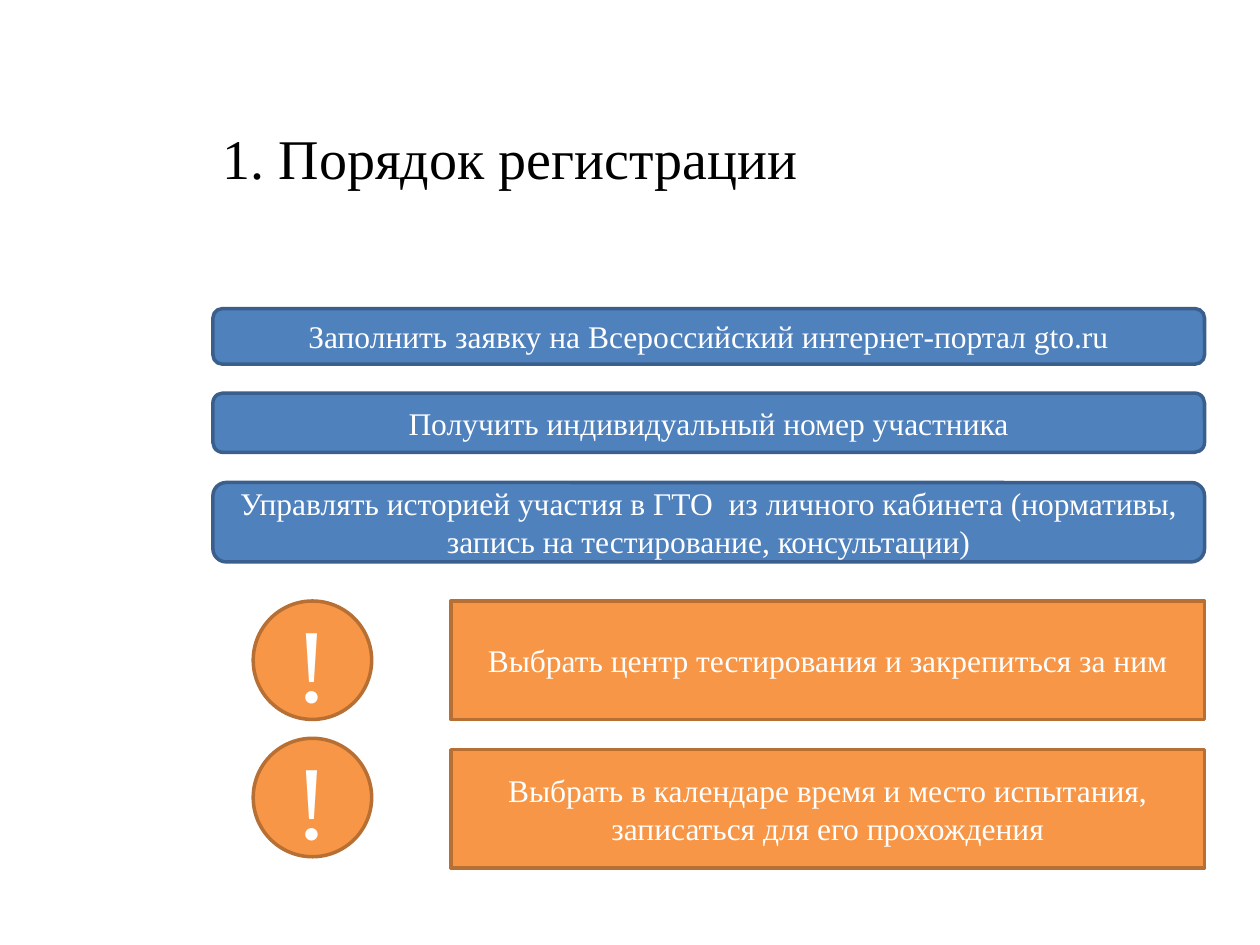
from pptx import Presentation
from pptx.dml.color import RGBColor
from pptx.enum import shapes, text
from pptx.util import Inches, Pt

FONT = "Times New Roman"
BLACK = RGBColor(0x00, 0x00, 0x00)
WHITE = RGBColor(0xFF, 0xFF, 0xFF)
BLUE = RGBColor(0x4F, 0x81, 0xBD)
NAVY = RGBColor(0x3A, 0x5F, 0x8C)
ORANGE = RGBColor(0xF7, 0x96, 0x46)
BROWN = RGBColor(0xB7, 0x6F, 0x34)
KIND = shapes.MSO_SHAPE

# Top and height of each step, then its wording
STEPS = [
    (0, 0.44, "Заполнить заявку на Всероссийский интернет-портал gto.ru"),
    (0.67, 0.47, "Получить индивидуальный номер участника"),
    (1.38, 0.63, "Управлять историей участия в ГТО  из личного кабинета "
                 "(нормативы, запись на тестирование, консультации)"),
]
# Top of the mark and of the box, then the wording
ALERTS = [
    (0, 0, "Выбрать центр тестирования и закрепиться за ним"),
    (1.09, 1.18, "Выбрать в календаре время и место испытания, "
                 "записаться для его прохождения"),
]


def write(shape, words, size=18, color=WHITE):
    frame = shape.text_frame
    frame.word_wrap = True
    frame.vertical_anchor = text.MSO_ANCHOR.MIDDLE
    para = frame.paragraphs[0]
    para.alignment = text.PP_ALIGN.CENTER
    run = para.add_run()
    run.text = words
    run.font.name = FONT
    run.font.size = Pt(size)
    run.font.color.rgb = color


def block(slide, kind, box, words, fill, edge, size=18):
    """Add a filled, outlined shape with centred text."""
    shape = slide.shapes.add_shape(kind, *map(Inches, box))
    shape.shadow.inherit = False
    shape.fill.solid()
    shape.fill.fore_color.rgb = fill
    shape.line.color.rgb = edge
    shape.line.width = Pt(2)
    write(shape, words, size=size)


def head(slide, left, top, width, height):
    title = slide.shapes.title
    title.left, title.top = Inches(left), Inches(top)
    title.width, title.height = Inches(width), Inches(height)
    write(title, "1. Порядок регистрации", size=32, color=BLACK)


def steps(slide, left, top, width):
    for drop, height, words in STEPS:
        block(slide, KIND.ROUNDED_RECTANGLE,
              (left, top + drop, width, height), words, BLUE, NAVY)


def alerts(slide, left, top, width):
    """Pair each orange box with a round exclamation mark at its left."""
    side, inset = 0.94, 1.57
    for mark, drop, words in ALERTS:
        block(slide, KIND.RECTANGLE,
              (left + inset, top + drop, width - inset, side),
              words, ORANGE, BROWN)
        block(slide, KIND.OVAL, (left, top + mark, side, side),
              "!", ORANGE, BROWN, size=60)


def main():
    deck = Presentation()
    deck.slide_width, deck.slide_height = Inches(10), Inches(7.5)
    slide = deck.slides.add_slide(deck.slide_layouts[0])
    spare = slide.placeholders[1].element
    spare.getparent().remove(spare)
    head(slide, -0.2, 0.44, 8.5, 1.61)
    steps(slide, 1.69, 2.45, 7.87)
    alerts(slide, 2.01, 4.77, 7.55)
    deck.save("out.pptx")


if __name__ == "__main__":
    main()
